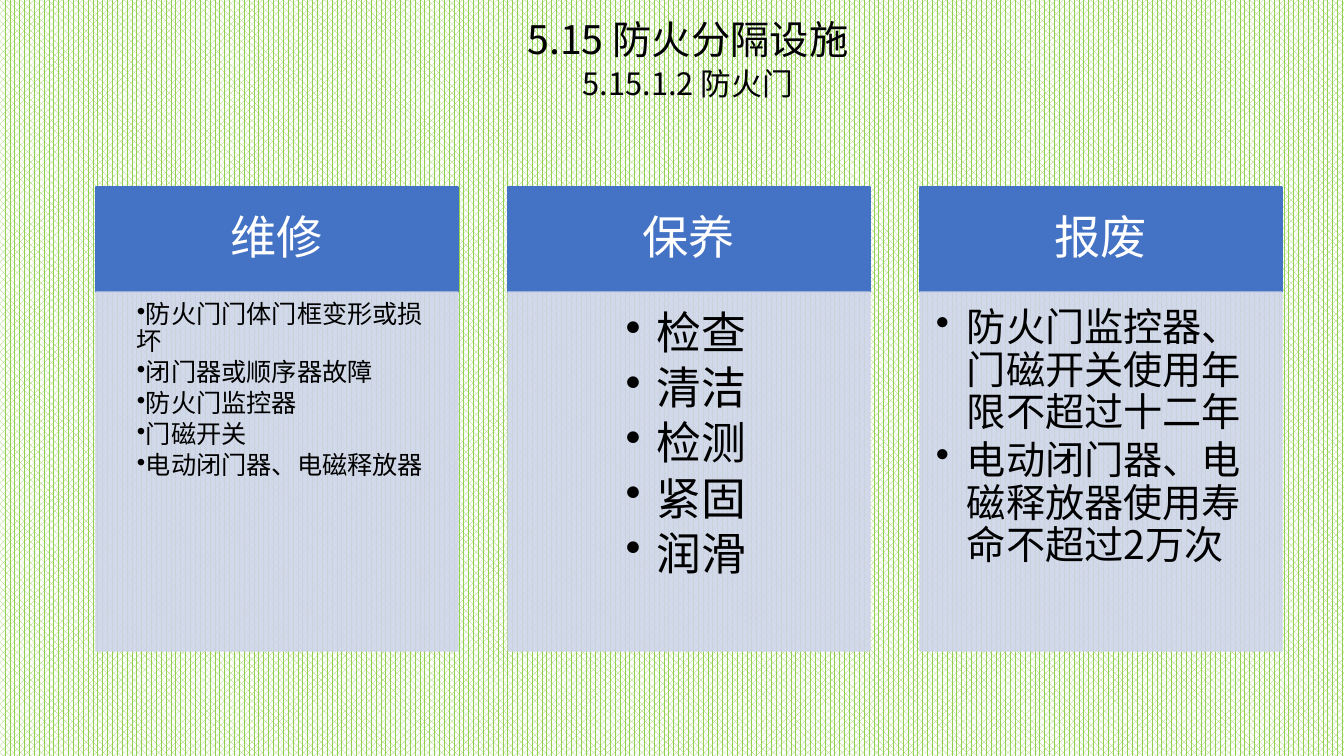
from lxml import etree
from pptx import Presentation
from pptx.dml.color import RGBColor
from pptx.enum.dml import MSO_PATTERN
from pptx.enum.shapes import MSO_SHAPE
from pptx.enum.text import MSO_ANCHOR, PP_ALIGN
from pptx.oxml.ns import qn
from pptx.util import Pt

PX = 914400 / 100.8
RECTANGLE = MSO_SHAPE.RECTANGLE
DOTS = MSO_PATTERN.PERCENT_70
LEFT, CENTER = PP_ALIGN.LEFT, PP_ALIGN.CENTER
TOP, MIDDLE = MSO_ANCHOR.TOP, MSO_ANCHOR.MIDDLE
FONT = "Noto Sans CJK SC"
COLORS = {"green": "92D050", "white": "FFFFFF", "black": "000000",
          "header": "4472C4", "body": "CFD5EA"}
MARGINS = ("margin_left", "margin_top", "margin_right", "margin_bottom")


def px(n):
    return round(n * PX)


def write_lines(frame, lines, color, insets, anchor, spacing, indent=None):
    """Fill a frame with (text, size, alignment, space after); indent adds bullets."""
    frame.word_wrap = True
    frame.vertical_anchor = anchor
    for margin, inset in zip(MARGINS, insets):
        setattr(frame, margin, px(inset))
    for i, (text, size, alignment, space_after) in enumerate(lines):
        paragraph = frame.paragraphs[0] if i == 0 else frame.add_paragraph()
        paragraph_format = {"alignment": alignment, "line_spacing": spacing,
                            "space_after": Pt(space_after)}
        for name, value in paragraph_format.items():
            setattr(paragraph, name, value)
        run = paragraph.add_run()
        run.text = text
        run.font.name = FONT
        run.font.size = Pt(size)
        run.font.color.rgb = RGBColor.from_string(COLORS[color])
        etree.SubElement(run.font._element, qn("a:ea"), typeface=FONT)
        if indent is not None:
            paragraph.level = 1
            properties = paragraph._p.get_or_add_pPr()
            properties.set("marL", str(px(31)))
            properties.set("indent", str(px(indent)))
            etree.SubElement(properties, qn("a:buChar"), char="•")


prs = Presentation()
prs.slide_width, prs.slide_height = px(1344), px(756)
slide = prs.slides.add_slide(prs.slide_layouts[6])

background = slide.background.fill
background.patterned()
background.pattern = DOTS
background.fore_color.rgb = RGBColor.from_string(COLORS["green"])
background.back_color.rgb = RGBColor.from_string(COLORS["white"])

title = slide.shapes.add_textbox(px(130), px(23), px(1116), px(95))
write_lines(title.text_frame,
            [("5.15 防火分隔设施", 28.1, CENTER, 9.8), ("5.15.1.2 防火门", 22, CENTER, 7.7)],
            "black", (10, 5, 10, 5), TOP, 0.7)

# heading, size, alignment, bullet indent, body insets, items
columns = [
    ("维修", 18, LEFT, 0, (10, 10, 14, 16),
     ["防火门门体门框变形或损坏", "闭门器或顺序器故障", "防火门监控器",
      "门磁开关", "电动闭门器、电磁释放器"]),
    ("保养", 32, CENTER, -31, (19, 19, 25, 28),
     ["检查", "清洁", "检测", "紧固", "润滑"]),
    ("报废", 28, LEFT, -31, (16, 16, 22, 24),
     ["防火门监控器、门磁开关使用年限不超过十二年",
      "电动闭门器、电磁释放器使用寿命不超过2万次"]),
]
COLUMN_LEFT, COLUMN_PITCH, COLUMN_WIDTH = 96, 412, 362
HEADER_TOP, HEADER_HEIGHT, BODY_HEIGHT = 187, 105, 359

for i, (heading, size, alignment, indent, insets, items) in enumerate(columns):
    left = COLUMN_LEFT + i * COLUMN_PITCH
    panels = {}
    for part, top, height in (("header", HEADER_TOP, HEADER_HEIGHT),
                              ("body", HEADER_TOP + HEADER_HEIGHT, BODY_HEIGHT)):
        panel = slide.shapes.add_shape(RECTANGLE, px(left), px(top),
                                       px(COLUMN_WIDTH), px(height))
        panel.shadow.inherit = False
        panel.line.width = Pt(1)
        for fill in (panel.fill, panel.line.fill):
            fill.solid()
            fill.fore_color.rgb = RGBColor.from_string(COLORS[part])
        panels[part] = panel
    for color in panels["body"]._element.spPr.iter(qn("a:srgbClr")):
        etree.SubElement(color, qn("a:alpha"), val="90000")
    write_lines(panels["header"].text_frame, [(heading, 33, CENTER, 0)],
                "white", (26, 15, 26, 15), MIDDLE, 0.9)
    write_lines(panels["body"].text_frame,
                [(item, size, alignment, round(size * 0.15, 1)) for item in items],
                "black", insets, TOP, 0.9, indent)

prs.save("out.pptx")
